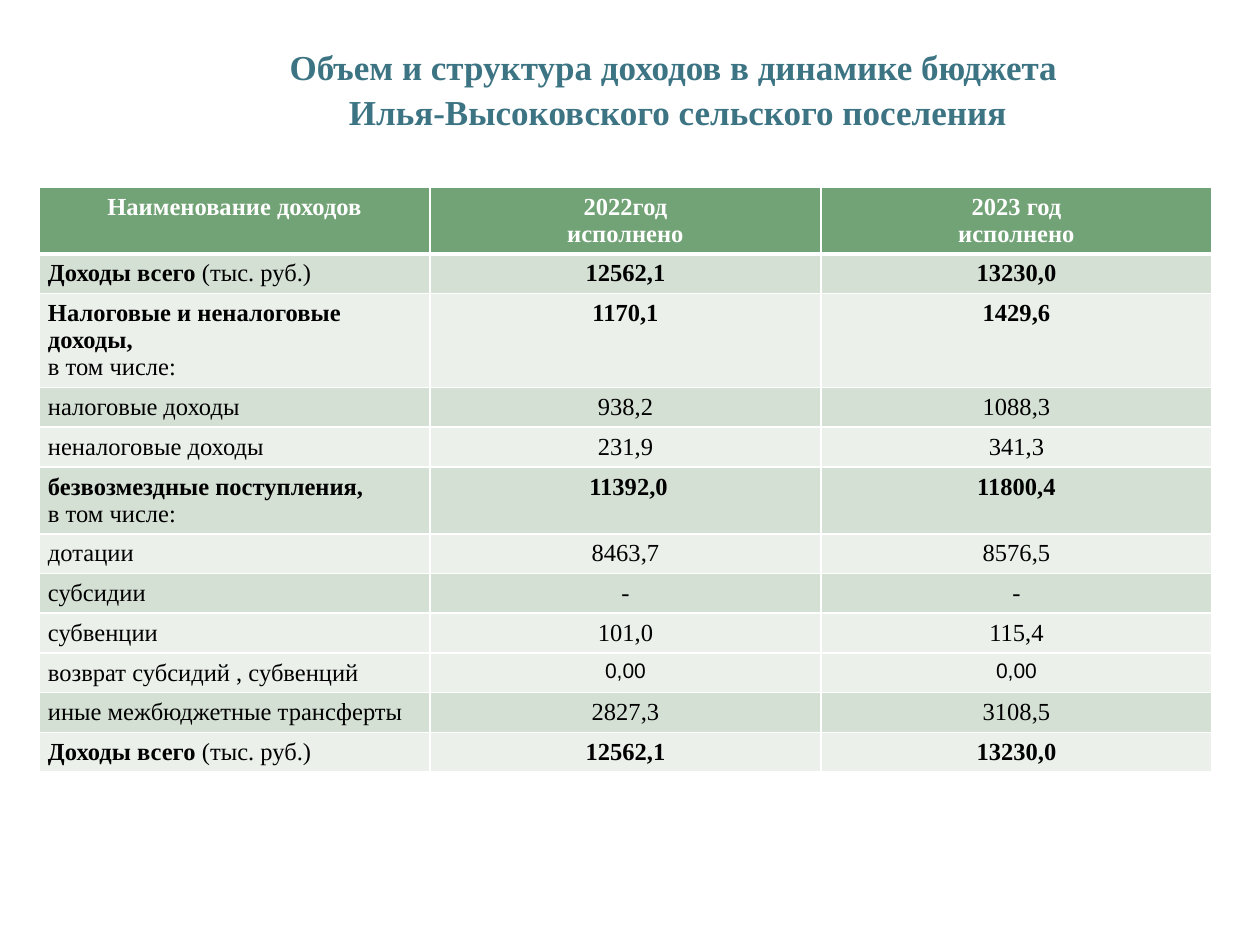
"""Build a slide with a table of budget income by year."""
from dataclasses import dataclass

from lxml.etree import SubElement as Sub
from pptx import Presentation
from pptx.dml.color import RGBColor as Rgb
from pptx.enum.text import MSO_ANCHOR as Anchor, MSO_AUTO_SIZE as Auto, PP_ALIGN as Align
from pptx.oxml.ns import qn
from pptx.util import Emu, Pt


@dataclass(frozen=True)
class Theme:
    serif: str = "Times New Roman"
    sans: str = "Arial"
    title: str = "3C7483"
    head: str = "72A376"
    dark: str = "D5E0D5"
    light: str = "EBF0EB"
    white: str = "FFFFFF"
    black: str = "000000"
    big: int = 20
    body: int = 14
    small: int = 12
    thin: float = 0.96
    thick: float = 3


def px(num):
    return Emu(round(num * 914400 / 126))


class Deck:
    def __init__(self, theme):
        self.theme = theme
        self.prs = Presentation()
        self.prs.slide_width, self.prs.slide_height = px(1260), px(945)
        self.slide = self.prs.slides.add_slide(self.prs.slide_layouts[5])

    def style(self, font, size, color, name=None):
        font.size, font.name = Pt(size), name or self.theme.serif
        font.color.rgb = Rgb.from_string(color)

    def title(self, lines, left, top, width, height):
        shape = self.slide.shapes.title
        shape.left, shape.top = px(left), px(top)
        shape.width, shape.height = px(width), px(height)
        frame = shape.text_frame
        frame.text = "\n".join(lines)
        frame.auto_size, frame.vertical_anchor = Auto.NONE, Anchor.MIDDLE
        for para in frame.paragraphs:
            para.alignment, para.line_spacing = Align.CENTER, 1.08
            para.font.bold = True
            self.style(para.font, self.theme.big, self.theme.title)

    def edge(self, cell, side, width):
        line = Sub(cell._tc.get_or_add_tcPr(), qn(f"a:ln{side}"), w=str(Pt(width)))
        fill = Sub(line, qn("a:solidFill"))
        Sub(fill, qn("a:srgbClr"), val=self.theme.white)

    def cell(self, cell, paras, fill, color, align, edges, font):
        """Fill a cell with paragraphs, each a list of (text, bold) runs."""
        cell.margin_left = cell.margin_right = px(9)
        for side, width in edges.items():
            self.edge(cell, side, width)
        cell.fill.solid()
        cell.fill.fore_color.rgb = Rgb.from_string(fill)
        frame = cell.text_frame
        for num, runs in enumerate(paras):
            para = frame.add_paragraph() if num else frame.paragraphs[0]
            para.alignment = align
            name, size = font
            self.style(para.font, size, color, name)
            for text, bold in runs:
                run = para.add_run()
                run.text, run.font.bold = text, bold

    def table(self, heads, rows, left, top, width, height):
        t = self.theme
        frame = self.slide.shapes.add_table(
            len(rows) + 1, len(heads), px(left), px(top), px(width), px(height))
        grid = frame.table
        for col in grid.columns:
            col.width = px(width // len(heads))
        serif, sans = (t.serif, t.body), (t.sans, t.small)
        base = dict.fromkeys("LRTB", t.thin)
        grid.rows[0].height = px(59)
        for col, lines in enumerate(heads):
            paras = [[(line, True)] for line in lines]
            self.cell(grid.cell(0, col), paras, t.head, t.white, Align.CENTER,
                      {**base, "B": t.thick}, serif)
        for num, (fill, tall, label, *vals) in enumerate(rows, 1):
            grid.rows[num].height = px(tall)
            edges = {**base, "T": t.thick if num == 1 else t.thin}
            self.cell(grid.cell(num, 0), label, fill, t.black, Align.LEFT, edges, serif)
            bold = label[0][0][1]
            for col, val in enumerate(vals, 1):
                font = sans if val == "0,00" else serif
                self.cell(grid.cell(num, col), [[(val, bold)]], fill, t.black,
                          Align.CENTER, edges, font)
        frame.height = px(height)

    def save(self):
        self.prs.save("out.pptx")


def plain(text):
    return [[(text, False)]]


def group(text):
    return [[(text, True)], [("в том числе:", False)]]


def main():
    theme = Theme()
    dark, light = theme.dark, theme.light
    total = [[("Доходы всего ", True), ("(тыс. руб.)", False)]]
    heads = [["Наименование доходов"], ["2022год", "исполнено"], ["2023 год", "исполнено"]]
    rows = [
        (dark, 29, total, "12562,1", "13230,0"),
        (light, 88, group("Налоговые и неналоговые доходы,"), "1170,1", "1429,6"),
        (dark, 29, plain("налоговые доходы"), "938,2", "1088,3"),
        (light, 29, plain("неналоговые доходы"), "231,9", "341,3"),
        (dark, 59, group("безвозмездные поступления,"), " 11392,0", "11800,4"),
        (light, 29, plain("дотации"), "8463,7", "8576,5"),
        (dark, 29, plain("субсидии"), "-", "-"),
        (light, 29, plain("субвенции"), "101,0", "115,4"),
        (light, 29, plain("возврат субсидий , субвенций"), "0,00", "0,00"),
        (dark, 29, plain("иные межбюджетные трансферты"), "2827,3", "3108,5"),
        (light, 29, total, "12562,1", "13230,0"),
    ]
    deck = Deck(theme)
    deck.title(["Объем и структура доходов в динамике бюджета",
                " Илья-Высоковского сельского поселения"], 147, 39, 1053, 97)
    deck.table(heads, rows, 39, 187, 1173, 621)
    deck.save()


if __name__ == "__main__":
    main()
